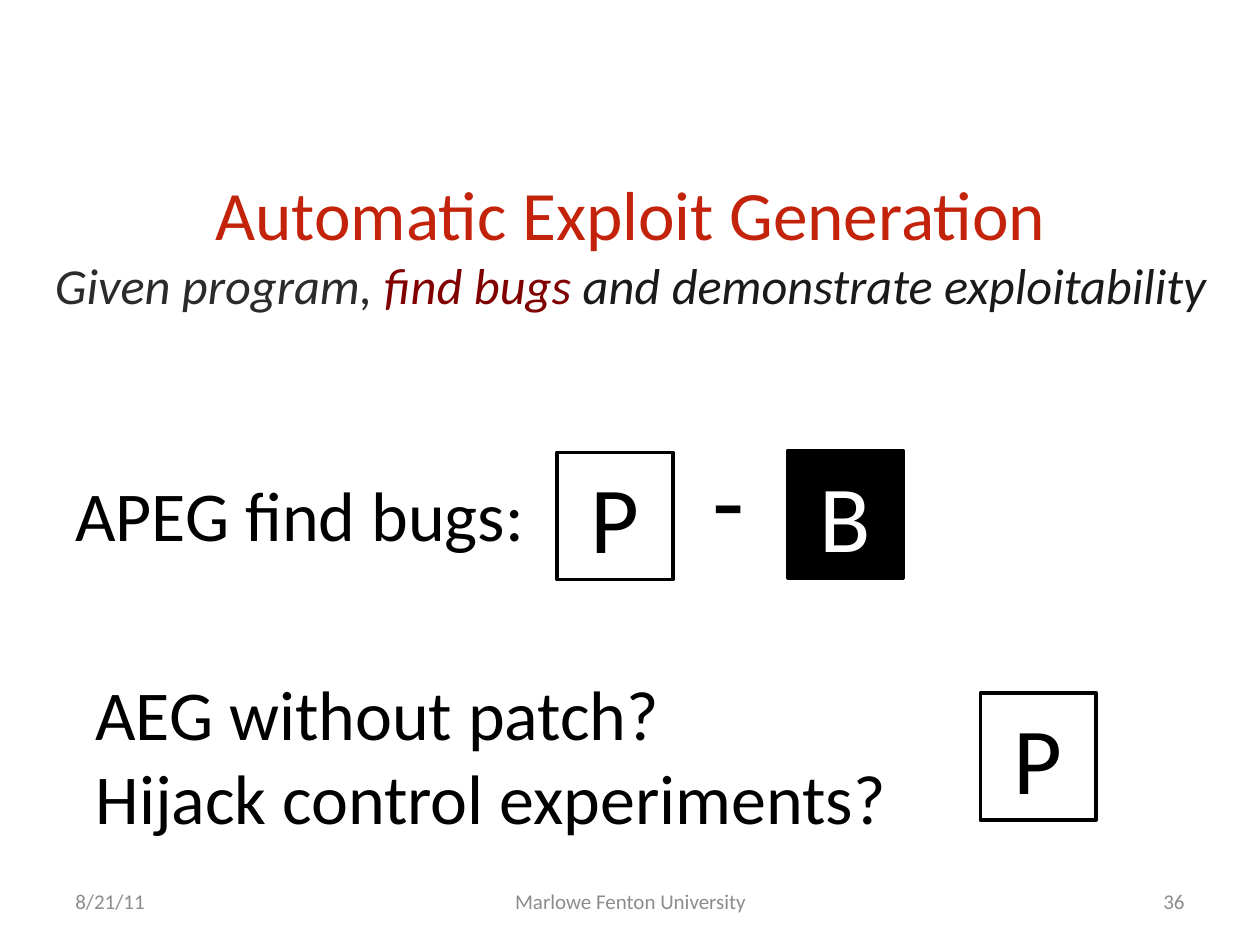
import pptx
import pptx.util
import pptx.dml.color
import pptx.enum.shapes
import pptx.enum.text

Inches = pptx.util.Inches
Align = pptx.enum.text.PP_ALIGN
Anchor = pptx.enum.text.MSO_ANCHOR


def rgb(hex_color):
    return pptx.dml.color.RGBColor.from_string(hex_color)


def write(shape, text, size=40, color="000000", italic=False, align=Align.LEFT,
          anchor=Anchor.TOP, wrap=True):
    """Append text to the shape's only paragraph; each newline is a line break."""
    frame = shape.text_frame
    frame.word_wrap = wrap
    frame.vertical_anchor = anchor
    paragraph = frame.paragraphs[0]
    paragraph.alignment = align
    for number, line in enumerate(text.split("\n")):
        if number:
            paragraph.add_line_break()
        if line:
            run = paragraph.add_run()
            run.text = line
            run.font.name = "Calibri"
            run.font.size = pptx.util.Pt(size)
            run.font.italic = italic
            run.font.color.rgb = rgb(color)


deck = pptx.Presentation()
deck.slide_width, deck.slide_height = Inches(10), Inches(7.5)
slide = deck.slides.add_slide(deck.slide_layouts[6])

# Title with subtitle
title = slide.shapes.add_textbox(Inches(0.29), Inches(1.19), Inches(9.43), Inches(1.47))
for text, size, color, italic in [
    ("Automatic Exploit Generation\n", 39.6, "C3230A", False),
    ("Given program, ", 28.8, "2B2B2B", True),
    ("find bugs", 28.8, "800000", True),
    (" and demonstrate exploitability", 28.8, "1A1A1A", True),
]:
    write(title, text, size=size, color=color, italic=italic,
          align=Align.CENTER, anchor=Anchor.MIDDLE)

# Footer: date, institution, slide number
for left, width, text, align in [
    (0.5, 2.33, "8/21/11", Align.LEFT),
    (3.42, 3.17, "Marlowe Fenton University", Align.CENTER),
    (7.17, 2.33, "36", Align.RIGHT),
]:
    footer = slide.shapes.add_textbox(Inches(left), Inches(6.95), Inches(width), Inches(0.4))
    write(footer, text, size=12, color="8C8C8C", align=align, anchor=Anchor.MIDDLE)

# Program boxes: P is outlined, B is solid
for left, top, letter, fill, color in [
    (4.42, 3.59, "P", None, "000000"),
    (6.25, 3.58, "B", "000000", "FFFFFF"),
    (7.78, 5.5, "P", None, "000000"),
]:
    program = slide.shapes.add_shape(pptx.enum.shapes.MSO_SHAPE.RECTANGLE, Inches(left),
                                     Inches(top), Inches(0.92), Inches(1.01))
    program.shadow.inherit = False
    if fill:
        program.fill.solid()
        program.fill.fore_color.rgb = rgb(fill)
    else:
        program.fill.background()
    program.line.color.rgb = rgb("000000")
    program.line.width = pptx.util.Pt(2)
    write(program, letter, size=54, color=color, align=Align.CENTER, anchor=Anchor.MIDDLE)

# Minus sign and statements
for left, top, width, height, text, size in [
    (5.56, 3.4, 0.46, 1.11, "-", 60),
    (0.5, 3.69, 3.81, 0.77, "APEG find bugs:", 40),
    (0.66, 5.27, 6.57, 1.45, "AEG without patch?\nHijack control experiments?", 40),
]:
    statement = slide.shapes.add_textbox(Inches(left), Inches(top), Inches(width), Inches(height))
    write(statement, text, size=size, wrap=False)

deck.save("out.pptx")
